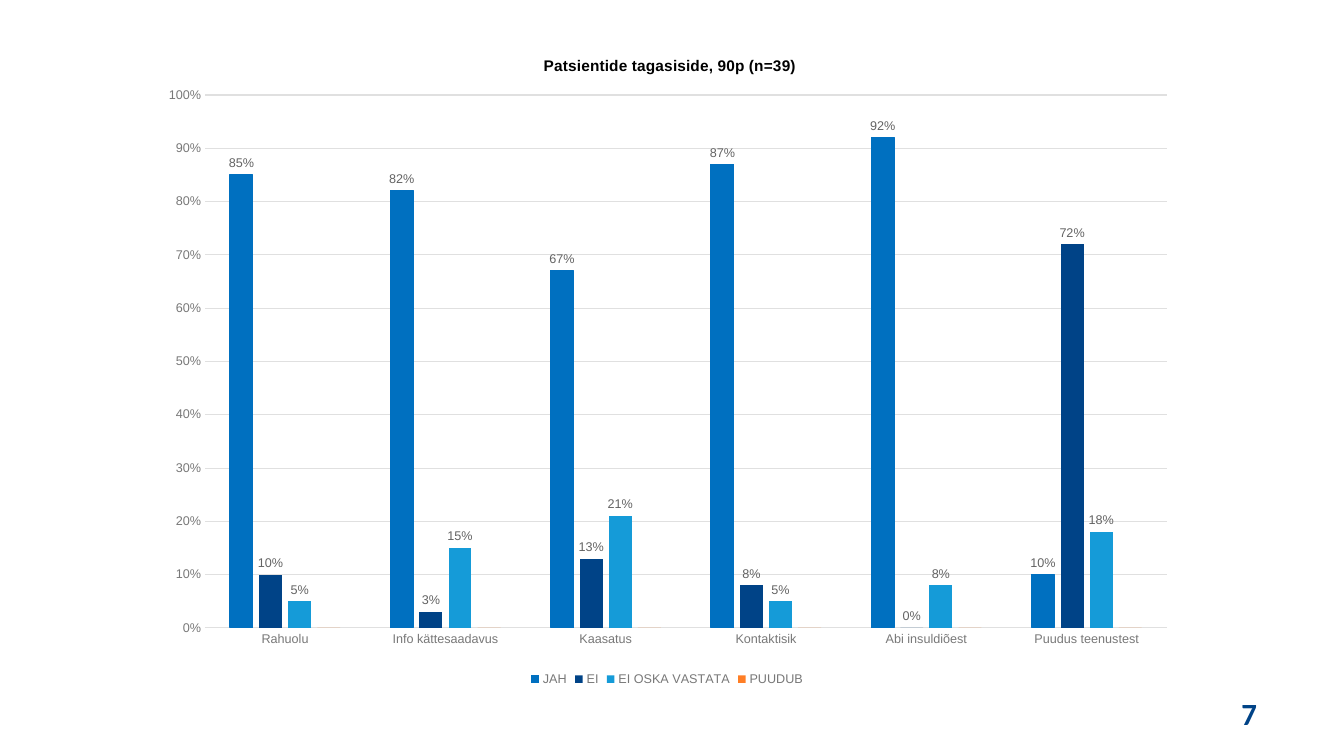
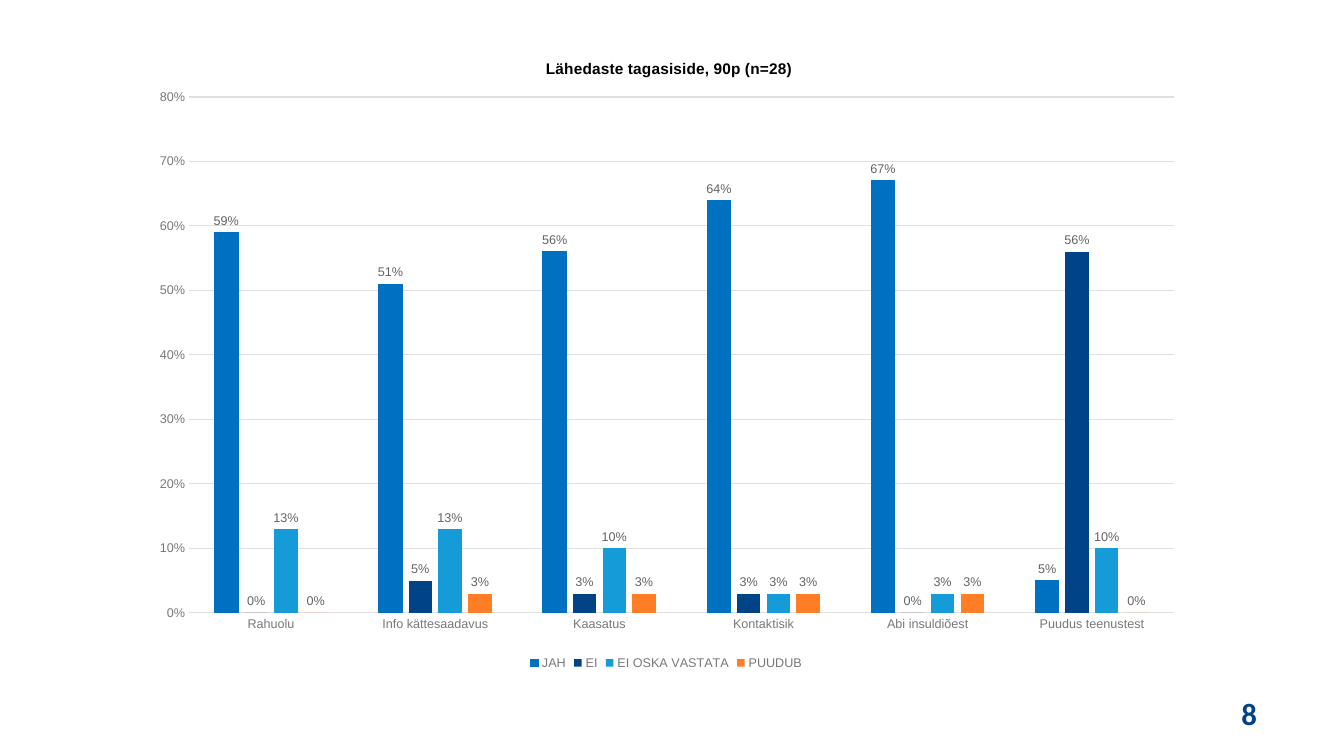
"""Build two slides of feedback charts."""
from lxml import etree
from pptx import Presentation
from pptx import util as u
from pptx.chart.data import CategoryChartData
from pptx.dml.color import RGBColor
from pptx.enum import chart as charts, text
from pptx.oxml.ns import qn

CATEGORIES = ["Rahuolu", "Info kättesaadavus", "Kaasatus", "Kontaktisik",
              "Abi insuldiõest", "Puudus teenustest"]
SERIES_NAMES = ["JAH", "EI", "EI OSKA VASTATA", "PUUDUB"]

SLIDES = [
    {
        "number": 7,
        "title": "Patsientide tagasiside, 90p (n=39)",
        "frame": (105.1, 20.9, 743, 472.3),
        "plot": (146.4, 67.9, 687.1, 380.7),
        "title_at": (386.4, 37),
        "maximum": 1.0,
        "labelled": ["JAH", "EI", "EI OSKA VASTATA"],
        "values": [
            (0.85, 0.82, 0.67, 0.87, 0.92, 0.10),
            (0.10, 0.03, 0.13, 0.08, 0, 0.72),
            (0.05, 0.15, 0.21, 0.05, 0.08, 0.18),
            (0, 0, 0, 0, 0, 0),
        ],
    },
    {
        "number": 8,
        "title": "Lähedaste tagasiside, 90p (n=28)",
        "frame": (98.6, 22.3, 754.6, 459.4),
        "plot": (135, 69.3, 703.6, 368.6),
        "title_at": (387.9, 39.2),
        "maximum": 0.8,
        "labelled": SERIES_NAMES,
        "values": [
            (0.59, 0.51, 0.56, 0.64, 0.67, 0.05),
            (0, 0.05, 0.03, 0.03, 0, 0.56),
            (0.13, 0.13, 0.10, 0.03, 0.03, 0.10),
            (0, 0.03, 0.03, 0.03, 0.03, 0),
        ],
    },
]

THEME = {
    "series": ["0070C0", "004387", "159BD8", "FF7E25"],
    "grid": "E0E0E0",
    "line_width": 0.75,
    "chart": {"name": "Arial", "size": 10, "color": "2F2F2F"},
    "title": {"name": "Arial", "size": 11, "color": "000000", "bold": True},
    "axis": {"name": "Arial", "size": 9, "color": "787878", "bold": False},
    "label": {"name": "Arial", "size": 9, "color": "636363", "bold": False},
    "number": {"name": "Calibri", "size": 22, "color": "004387", "bold": True},
}
NUMBER_BOX = (843.1, 496.8, 61.9, 28.1)


def points(lengths):
    return [u.Pt(length) for length in lengths]


def set_all(target, values):
    for name, value in values.items():
        setattr(target, name, value)


def style_font(font, style):
    for name, value in style.items():
        if name == "color":
            font.color.rgb = RGBColor.from_string(value)
        else:
            setattr(font, name, u.Pt(value) if name == "size" else value)


def style_line(line, color):
    line.color.rgb = RGBColor.from_string(color)
    line.width = u.Pt(THEME["line_width"])


def place(element, frame, box, after, inner=False):
    """Give a chart part a manual layout, from a box in slide points."""
    for old in element.findall(qn("c:layout")):
        element.remove(old)
    layout = etree.Element(qn("c:layout"))
    manual = etree.SubElement(layout, qn("c:manualLayout"))
    left, top, width, height = frame
    entries = [("layoutTarget", "inner")] if inner else []
    entries += [("xMode", "edge"), ("yMode", "edge"),
                ("x", (box[0] - left) / width), ("y", (box[1] - top) / height)]
    if inner:
        entries += [("w", box[2] / width), ("h", box[3] / height)]
    for name, value in entries:
        etree.SubElement(manual, qn(f"c:{name}")).set("val", str(value))
    if after is None:
        element.insert(0, layout)
    else:
        after.addnext(layout)


def style_axes(chart, maximum):
    for axis in (chart.category_axis, chart.value_axis):
        set_all(axis, {"major_tick_mark": charts.XL_TICK_MARK.NONE,
                       "minor_tick_mark": charts.XL_TICK_MARK.NONE})
        style_font(axis.tick_labels.font, THEME["axis"])
    style_line(chart.category_axis.format.line, THEME["grid"])
    value_axis = chart.value_axis
    set_all(value_axis, {"minimum_scale": 0, "maximum_scale": maximum,
                         "major_unit": 0.1, "has_major_gridlines": True})
    value_axis.format.line.fill.background()
    style_line(value_axis.major_gridlines.format.line, THEME["grid"])
    set_all(value_axis.tick_labels, {"number_format": "0%",
                                     "number_format_is_linked": False})


def style_series(plot, labelled):
    set_all(plot, {"gap_width": 219, "overlap": -27, "vary_by_categories": False})
    for series, color in zip(plot.series, THEME["series"]):
        series.format.fill.solid()
        series.format.fill.fore_color.rgb = RGBColor.from_string(color)
        series.invert_if_negative = False
        if series.name in labelled:
            labels = series.data_labels
            set_all(labels, {"show_value": True, "number_format": "0%",
                             "number_format_is_linked": False,
                             "position": charts.XL_LABEL_POSITION.OUTSIDE_END})
            style_font(labels.font, THEME["label"])
    style_line(plot.series[0].format.line, THEME["series"][0])


def add_feedback_chart(slide, content):
    data = CategoryChartData(number_format="0%")
    data.categories = CATEGORIES
    for name, values in zip(SERIES_NAMES, content["values"]):
        data.add_series(name, values)
    frame = content["frame"]
    chart = slide.shapes.add_chart(
        charts.XL_CHART_TYPE.COLUMN_CLUSTERED, *points(frame), data).chart
    style_font(chart.font, THEME["chart"])

    chart.has_title = True
    title = chart.chart_title
    title.include_in_layout = False
    paragraph = title.text_frame.paragraphs[0]
    run = paragraph.add_run()
    run.text = content["title"]
    style_font(run.font, THEME["title"])
    title_element = title.text_frame._txBody.getparent().getparent()
    place(title_element, frame, content["title_at"], title_element.find(qn("c:tx")))

    chart.has_legend = True
    set_all(chart.legend, {"position": charts.XL_LEGEND_POSITION.BOTTOM,
                           "include_in_layout": False})
    style_font(chart.legend.font, THEME["axis"])

    style_axes(chart, content["maximum"])
    style_series(chart.plots[0], content["labelled"])
    plot_area = chart.element.find(f".//{qn('c:plotArea')}")
    place(plot_area, frame, content["plot"], None, inner=True)


def add_number(slide, number):
    text_frame = slide.shapes.add_textbox(*points(NUMBER_BOX)).text_frame
    set_all(text_frame, {"word_wrap": True,
                         "vertical_anchor": text.MSO_ANCHOR.MIDDLE})
    paragraph = text_frame.paragraphs[0]
    set_all(paragraph, {"alignment": text.PP_ALIGN.RIGHT, "line_spacing": 0.9})
    run = paragraph.add_run()
    run.text = str(number)
    style_font(run.font, THEME["number"])


def main():
    presentation = Presentation()
    set_all(presentation, {"slide_width": u.Pt(960), "slide_height": u.Pt(540)})
    for content in SLIDES:
        slide = presentation.slides.add_slide(presentation.slide_layouts[6])
        add_number(slide, content["number"])
        add_feedback_chart(slide, content)
    presentation.save("out.pptx")


if __name__ == "__main__":
    main()
